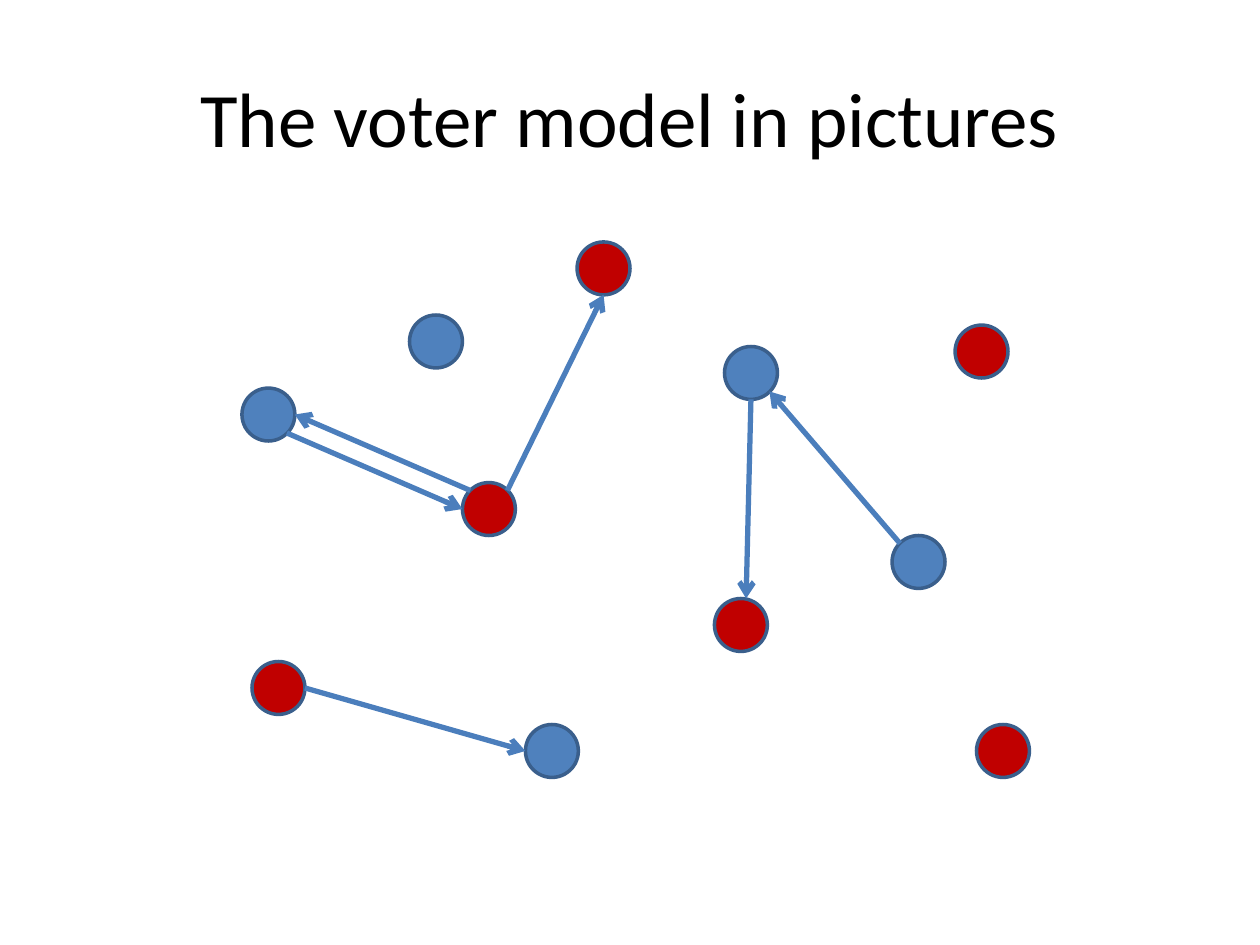
from lxml.etree import SubElement
from pptx import Presentation
from pptx.dml.color import RGBColor
from pptx.enum.shapes import MSO_CONNECTOR as Connector, MSO_SHAPE as Shape
from pptx.enum.text import MSO_ANCHOR as Anchor, PP_ALIGN as Align
from pptx.oxml.ns import qn
from pptx.util import Inches, Pt

COLORS = {
    "text": "000000",
    "blue": "4F81BD",
    "red": "C00000",
    "outline": "3A5F8C",
    "arrow": "4B7EBC",
}
DIAMETER = 0.42
VOTERS = {
    "west": (0, 1.16, "blue"),
    "northwest": (1.33, 0.58, "blue"),
    "south": (2.25, 3.83, "blue"),
    "east": (5.16, 2.33, "blue"),
    "hub": (3.83, 0.83, "blue"),
    "southwest": (0.08, 3.33, "red"),
    "center": (1.75, 1.91, "red"),
    "below hub": (3.75, 2.83, "red"),
    "northeast": (5.66, 0.66, "red"),
    "southeast": (5.83, 3.83, "red"),
    "north": (2.66, 0, "red"),
}
SITES = {
    "top": (0.6, 0),
    "bottom": (0.5, 1),
    "left": (0, 0.5),
    "right": (1, 0.5),
    "top left": (0.15, 0.15),
    "top right": (0.85, 0.15),
    "bottom right": (0.85, 0.85),
}
LINKS = [
    ("west", "bottom right", "center", "left"),
    ("center", "top left", "west", "right"),
    ("center", "top right", "north", "bottom"),
    ("hub", "bottom", "below hub", "top"),
    ("southwest", "right", "south", "left"),
    ("east", "top left", "hub", "bottom right"),
]


def color(name):
    """Return the named palette colour."""
    return RGBColor.from_string(COLORS[name])


def add_title(page, box, text):
    """Place and format the title placeholder in the box."""
    title = page.shapes.title
    title.left, title.top, title.width, title.height = map(Inches, box)
    frame = title.text_frame
    frame.vertical_anchor = Anchor.MIDDLE
    para = frame.paragraphs[0]
    para.alignment = Align.CENTER
    span = para.add_run()
    span.text = text
    span.font.name = "Calibri"
    span.font.size = Pt(44)
    span.font.color.rgb = color("text")


def add_voter(page, left, top, opinion):
    """Draw one voter as a circle in the colour of its opinion."""
    circle = page.shapes.add_shape(
        Shape.OVAL, Inches(left), Inches(top), Inches(DIAMETER), Inches(DIAMETER)
    )
    circle.shadow.inherit = False
    circle.fill.solid()
    circle.fill.fore_color.rgb = color(opinion)
    circle.line.color.rgb = color("outline")
    circle.line.width = Pt(2)


def add_arrow(page, start, end):
    """Draw an arrow from start to end."""
    arrow = page.shapes.add_connector(
        Connector.STRAIGHT, *map(Inches, (*start, *end))
    )
    arrow.line.color.rgb = color("arrow")
    arrow.line.width = Pt(3)
    SubElement(arrow.line._get_or_add_ln(), qn("a:tailEnd"), type="arrow")
    SubElement(arrow._element.spPr, qn("a:effectLst"))


def add_network(page, box):
    """Draw the voters and the links between them inside the box."""
    left, top = box[:2]

    def site(voter, side):
        """Return the position of a link's end on a voter."""
        x, y, _ = VOTERS[voter]
        across, down = SITES[side]
        return left + x + across * DIAMETER, top + y + down * DIAMETER

    for x, y, opinion in VOTERS.values():
        add_voter(page, left + x, top + y, opinion)
    for source, exit_side, target, entry_side in LINKS:
        add_arrow(page, site(source, exit_side), site(target, entry_side))


def main():
    """Build and save the deck."""
    deck = Presentation()
    deck.slide_width, deck.slide_height = Inches(10), Inches(7.5)
    page = deck.slides.add_slide(deck.slide_layouts[5])
    add_title(page, (0.5, 0.3, 9, 1.25), "The voter model in pictures")
    add_network(page, (1.92, 1.92, 6.25, 4.25))
    deck.save("out.pptx")


if __name__ == "__main__":
    main()
